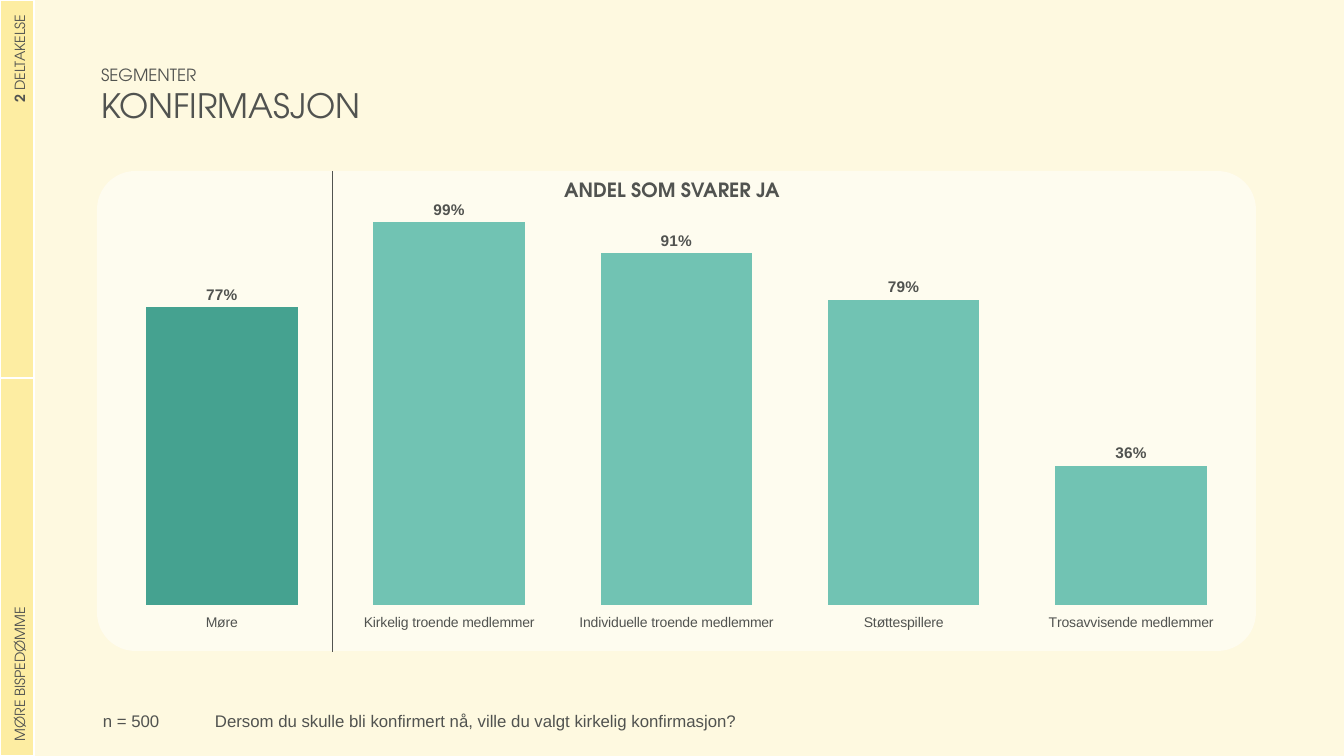
from lxml import etree
from pptx import Presentation
from pptx.chart.data import CategoryChartData
from pptx.dml.color import RGBColor
from pptx.enum.chart import XL_CHART_TYPE as ChartType, XL_LABEL_POSITION as LabelPosition
from pptx.enum.chart import XL_TICK_LABEL_POSITION as TickLabels, XL_TICK_MARK as TickMark
from pptx.enum.shapes import MSO_CONNECTOR as Connector, MSO_SHAPE as Shape
from pptx.enum.text import MSO_ANCHOR as Anchor, MSO_AUTO_SIZE as AutoSize, PP_ALIGN as Align
from pptx.oxml import parse_xml
from pptx.oxml.ns import nsdecls, qn
from pptx.util import Emu, Pt

CREAM = RGBColor(0xFE, 0xF9, 0xE0)
YELLOW = RGBColor(0xFD, 0xED, 0xA2)
INK = RGBColor(0x51, 0x53, 0x50)
WHITE = RGBColor(0xFF, 0xFF, 0xFF)
TEAL = RGBColor(0x71, 0xC3, 0xB3)
DARK_TEAL = RGBColor(0x45, 0xA2, 0x90)
HEADING = "TeX Gyre Adventor"
BODY = "Arial"


def px(*lengths):
    return [Emu(round(length * 914400 / 100.8)) for length in lengths]


def write(para, text, size=12, face=HEADING, bold=False, align=Align.LEFT):
    para.alignment = align
    span = para.add_run()
    span.text = text
    span.font.size = Pt(size)
    span.font.name = face
    span.font.bold = bold
    span.font.color.rgb = INK


deck = Presentation()
deck.slide_width, deck.slide_height = px(1344, 756)
page = deck.slides.add_slide(deck.slide_layouts[5])
page.background.fill.solid()
page.background.fill.fore_color.rgb = CREAM

title = page.shapes.title
title.left, title.top, title.width, title.height = px(91, 59, 1063, 72)
heading = title.text_frame
heading.word_wrap = True
heading.auto_size = AutoSize.NONE
heading.vertical_anchor = Anchor.MIDDLE
write(heading.paragraphs[0], "SEGMENTER")
write(heading.add_paragraph(), "KONFIRMASJON", size=24)

sidebar = page.shapes.add_table(2, 1, *px(0, 0, 34, 756)).table
sidebar.columns[0].width = px(34)[0]
side_texts = [
    ([("2", True), (" DELTAKELSE", False)], Align.RIGHT),
    ([("MØRE BISPEDØMME", False)], Align.LEFT),
]
for row, (spans, align) in enumerate(side_texts):
    sidebar.rows[row].height = px(378)[0]
    cell = sidebar.cell(row, 0)
    cell.fill.solid()
    cell.fill.fore_color.rgb = YELLOW
    cell.vertical_anchor = Anchor.MIDDLE
    cell.margin_left, cell.margin_top, cell.margin_right, cell.margin_bottom = px(15, 15, 15, 15)
    cell._tc.get_or_add_tcPr().set("vert", "vert270")
    for text, bold in spans:
        write(cell.text_frame.paragraphs[0], text, size=10, bold=bold, align=align)

panel = page.shapes.add_shape(Shape.ROUNDED_RECTANGLE, *px(97, 171, 1159, 480))
panel.adjustments[0] = 0.08
panel.shadow.inherit = False
panel.line.fill.background()
panel.fill.solid()
panel.fill.fore_color.rgb = WHITE
color = panel._element.spPr.find(qn("a:solidFill"))[0]
etree.SubElement(color, qn("a:alpha")).set("val", "50000")

answers = CategoryChartData(number_format="0%")
answers.categories = [
    "Møre",
    "Kirkelig troende medlemmer",
    "Individuelle troende medlemmer",
    "Støttespillere",
    "Trosavvisende medlemmer",
]
answers.add_series("Series 1", [0.77, 0.99, 0.91, 0.79, 0.36])
chart = page.shapes.add_chart(ChartType.COLUMN_CLUSTERED, *px(93, 171, 1167, 480), answers).chart
chart.has_title = False
chart.has_legend = False
chart.font.name = HEADING
chart.font.size = Pt(10)
chart.font.color.rgb = INK

shares = chart.value_axis
shares.minimum_scale = 0
shares.maximum_scale = 1
shares.has_major_gridlines = False
shares.visible = False
segments = chart.category_axis
segments.major_tick_mark = TickMark.NONE
segments.tick_label_position = TickLabels.LOW
segments.format.line.fill.background()
segments.tick_labels.font.name = BODY
segments.tick_labels.font.size = Pt(10)
segments.tick_labels.font.color.rgb = INK

plot = chart.plots[0]
plot.gap_width = 50
plot.vary_by_categories = False
bars = plot.series[0]
bars.invert_if_negative = False
for target, fill_color in [(bars, TEAL), (bars.points[0], DARK_TEAL)]:
    target.format.fill.solid()
    target.format.fill.fore_color.rgb = fill_color
labels = bars.data_labels
labels.show_value = True
labels.number_format = "0%"
labels.number_format_is_linked = False
labels.position = LabelPosition.OUTSIDE_END
labels.font.name = BODY
labels.font.size = Pt(11)
labels.font.bold = True
labels.font.color.rgb = INK

plot_area = chart._chartSpace.chart.plotArea
for old_layout in plot_area.findall(qn("c:layout")):
    plot_area.remove(old_layout)
plot_area.insert(0, parse_xml(
    f'<c:layout {nsdecls("c")}><c:manualLayout><c:layoutTarget val="inner"/>'
    '<c:xMode val="edge"/><c:yMode val="edge"/><c:x val="0.013"/><c:y val="0.099"/>'
    '<c:w val="0.974"/><c:h val="0.806"/></c:manualLayout></c:layout>'
))

divider = page.shapes.add_connector(Connector.STRAIGHT, *px(332, 171, 332, 652))
divider.line.color.rgb = INK
divider.line.width = Pt(0.5)
etree.SubElement(divider._element.spPr, qn("a:effectLst"))

captions = [
    ("Dersom du skulle bli konfirmert nå, ville du valgt kirkelig konfirmasjon?",
     (205, 706, 1047, 27), dict(face=BODY)),
    ("n = 500", (93, 706, 144, 27), dict(face=BODY)),
    ("ANDEL SOM SVARER JA", (336, 173, 672, 34), dict(size=14, bold=True, align=Align.CENTER)),
]
for text, place, style in captions:
    box = page.shapes.add_textbox(*px(*place))
    box.text_frame.word_wrap = True
    write(box.text_frame.paragraphs[0], text, **style)

deck.save("out.pptx")
